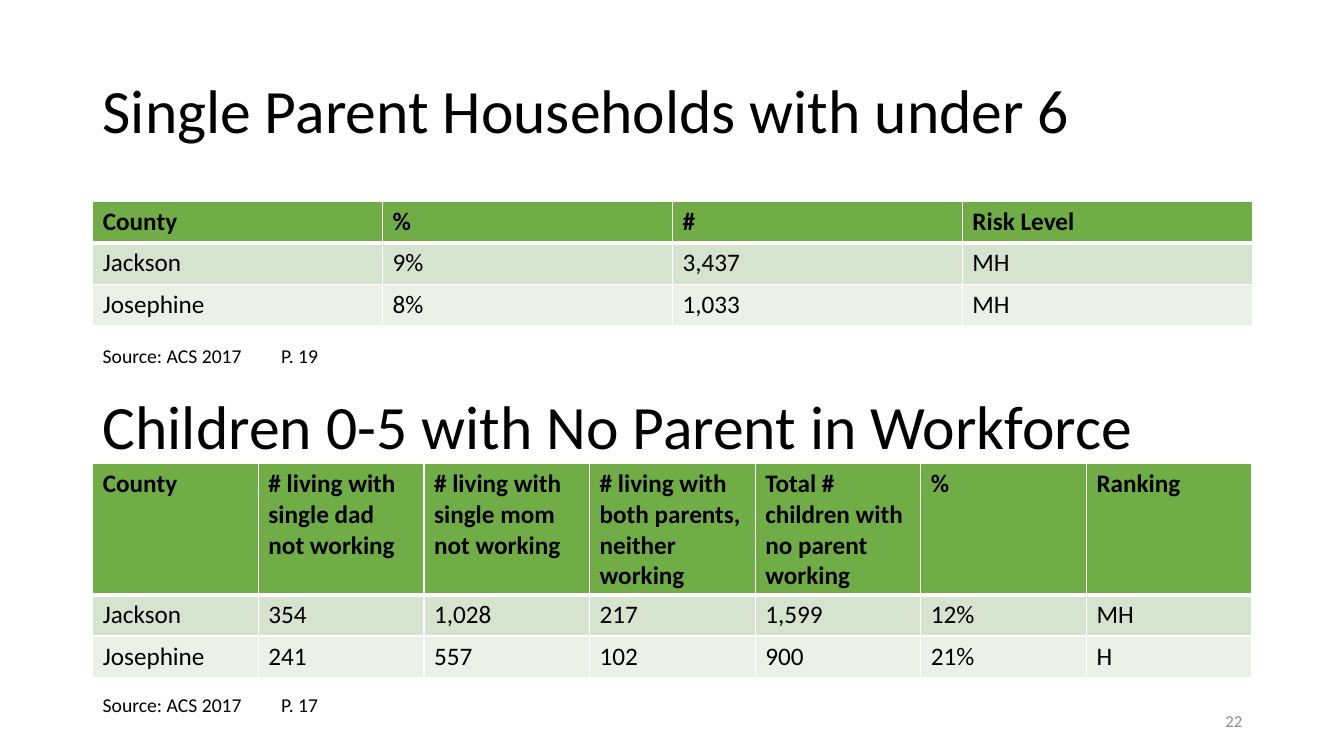
from lxml import etree
from pptx import Presentation
from pptx.dml.color import RGBColor
from pptx.enum.text import MSO_ANCHOR, PP_ALIGN
from pptx.oxml.ns import qn
from pptx.util import Inches, Pt

MID, TOP = MSO_ANCHOR.MIDDLE, MSO_ANCHOR.TOP
LEFT, RIGHT = PP_ALIGN.LEFT, PP_ALIGN.RIGHT

HUES = {"ink": "000000", "gray": "8C8C8C", "line": "FFFFFF",
        "head": "70AD47", "odd": "D5E3CF", "even": "EBF1E9"}
WIDE, HIGH = 13.33, 7.5
EDGE, SPAN = 0.92, 11.5
ROW = 0.41
STOP = 1.77

TEXTS = [
    ("Single Parent Households with under 6", (EDGE, 0.4, SPAN, 1.45),
     {"size": 44, "anchor": MID, "space": 0.9}),
    ("Source: ACS 2017\tP. 19", (EDGE, 3.36, 7.68, 0.34), {"size": 14}),
    ("Children 0-5 with No Parent in Workforce", (EDGE, 3.8, 11.18, 0.84), {"size": 44}),
    ("Source: ACS 2017\tP. 17", (EDGE, 6.83, 6.22, 0.34), {"size": 14}),
    ("22", (EDGE + SPAN - 3, 6.95, 3, 0.4),
     {"size": 12, "anchor": MID, "align": RIGHT, "hue": "gray"}),
]

HOMES = [
    ("County", "%", "#", "Risk Level"),
    ("Jackson", "9%", "3,437", "MH"),
    ("Josephine", "8%", "1,033", "MH"),
]
WORK = [
    ("County", "# living with single dad not working",
     "# living with single mom not working",
     "# living with both parents, neither working",
     "Total # children with no parent working", "%", "Ranking"),
    ("Jackson", "354", "1,028", "217", "1,599", "12%", "MH"),
    ("Josephine", "241", "557", "102", "900", "21%", "H"),
]
TABLES = [(HOMES, 2, ROW), (WORK, 4.6, 1.29)]


def style(para, size, hue="ink", bold=False):
    look = {"name": "Calibri", "size": Pt(size), "bold": bold}
    for key, value in look.items():
        setattr(para.font, key, value)
    para.font.color.rgb = RGBColor.from_string(HUES[hue])


def write(slide, text, spot, size, anchor=TOP, align=LEFT, hue="ink", space=None):
    frame = slide.shapes.add_textbox(*map(Inches, spot)).text_frame
    frame.word_wrap = True
    frame.vertical_anchor = anchor
    para = frame.paragraphs[0]
    para.text = text
    para.alignment = align
    if space:
        para.line_spacing = space
    if "\t" in text:
        tabs = etree.SubElement(para._p.get_or_add_pPr(), qn("a:tabLst"))
        etree.SubElement(tabs, qn("a:tab"), pos=str(Inches(STOP)), algn="l")
    style(para, size, hue)


def border(cell, row):
    props = cell._tc.get_or_add_tcPr()
    for side in "LRTB":
        thick = 3 if (row, side) in ((0, "B"), (1, "T")) else 1
        line = etree.SubElement(props, qn("a:ln" + side), w=str(Pt(thick)))
        fill = etree.SubElement(line, qn("a:solidFill"))
        etree.SubElement(fill, qn("a:srgbClr"), val=HUES["line"])


def tabulate(slide, data, top, head):
    count = len(data[0])
    highs = [head] + [ROW] * (len(data) - 1)
    spot = map(Inches, (EDGE, top, SPAN, sum(highs)))
    table = slide.shapes.add_table(len(data), count, *spot).table
    for col in table.columns:
        col.width = Inches(SPAN / count)
    for row, (words, high) in enumerate(zip(data, highs)):
        table.rows[row].height = Inches(high)
        for col, word in enumerate(words):
            cell = table.cell(row, col)
            cell.text = word
            style(cell.text_frame.paragraphs[0], 18, bold=row == 0)
            border(cell, row)
            cell.fill.solid()
            hue = ("head", "odd", "even")[row]
            cell.fill.fore_color.rgb = RGBColor.from_string(HUES[hue])


def main():
    deck = Presentation()
    deck.slide_width, deck.slide_height = Inches(WIDE), Inches(HIGH)
    slide = deck.slides.add_slide(deck.slide_layouts[6])
    for text, spot, look in TEXTS:
        write(slide, text, spot, **look)
    for data, top, head in TABLES:
        tabulate(slide, data, top, head)
    deck.save("out.pptx")


if __name__ == "__main__":
    main()
